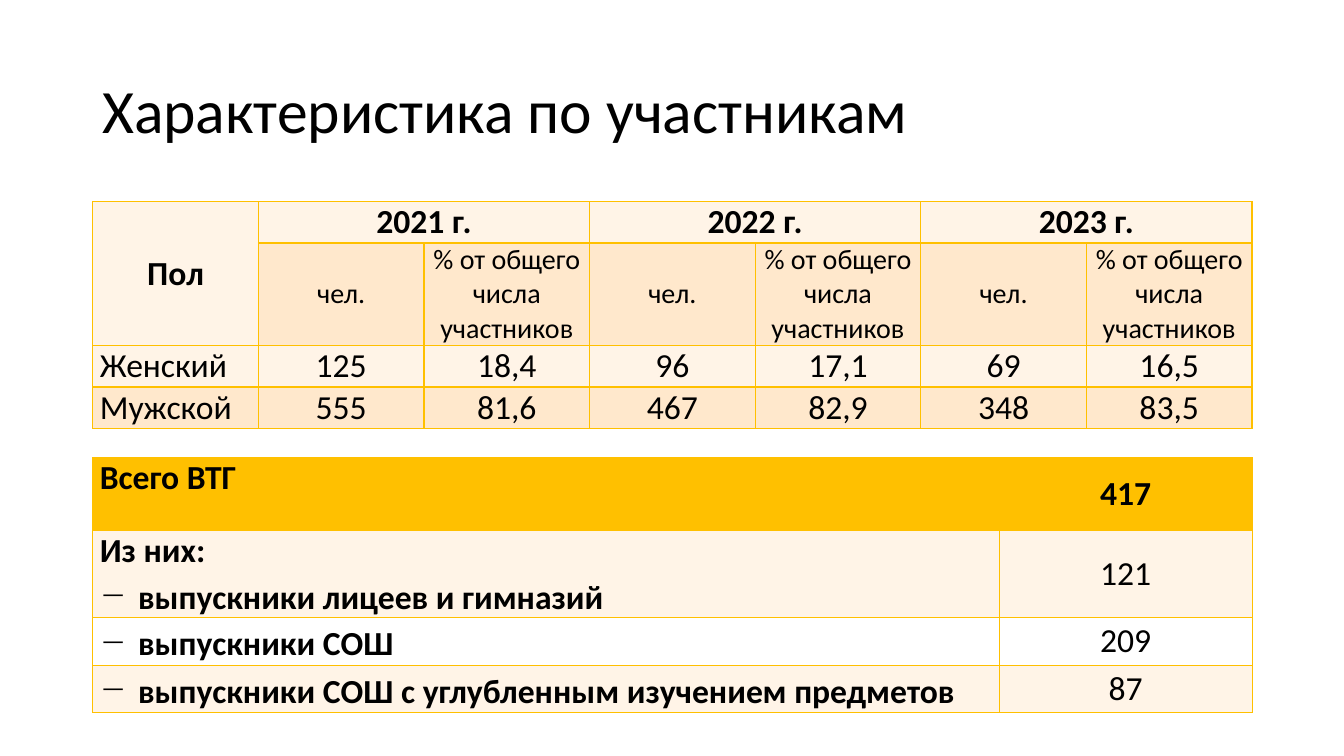
from dataclasses import dataclass

from lxml.etree import SubElement
from pptx import Presentation
from pptx.dml.color import RGBColor
from pptx.enum.text import MSO_ANCHOR as Anchor, PP_ALIGN as Align
from pptx.oxml.ns import qn
from pptx.slide import Slide
from pptx.table import Table, _Cell as Cell
from pptx.text.text import _Paragraph as Paragraph
from pptx.util import Inches, Pt

FONT = "Calibri"
BLACK, WHITE, GOLD, CREAM, PEACH = "000000", "FFFFFF", "FFC000", "FFF4E7", "FFE8CC"
LEFT, WIDTH = 0.92, 11.5
BULLET_INDENT = 0.38


@dataclass
class Line:
    text: str
    size: int = 24
    bold: bool = False
    align: Align = Align.CENTER
    bullet: bool = False


@dataclass
class CellSpec:
    lines: list[Line]
    fill: str
    anchor: Anchor = Anchor.MIDDLE


def color(value: str) -> RGBColor:
    return RGBColor.from_string(value)


def write_line(paragraph: Paragraph, line: Line) -> None:
    paragraph.text = line.text
    paragraph.alignment = line.align
    font = paragraph.font
    font.name, font.size, font.bold = FONT, Pt(line.size), line.bold
    font.color.rgb = color(BLACK)
    if line.bullet:
        paragraph.line_spacing = 1.15
        properties = paragraph._p.get_or_add_pPr()
        properties.set("marL", str(Inches(BULLET_INDENT)))
        properties.set("indent", str(-Inches(BULLET_INDENT)))
        bullet = properties.makeelement(qn("a:buChar"), {"char": "−"})
        properties.find(qn("a:lnSpc")).addnext(bullet)


def add_borders(cell: Cell) -> None:
    properties = cell._tc.get_or_add_tcPr()
    for side in ("lnL", "lnR", "lnT", "lnB"):
        border = SubElement(properties, qn(f"a:{side}"), w=str(Pt(1)))
        fill = SubElement(border, qn("a:solidFill"))
        SubElement(fill, qn("a:srgbClr"), val=GOLD)


def fill_cell(cell: Cell, spec: CellSpec) -> None:
    add_borders(cell)
    cell.fill.solid()
    cell.fill.fore_color.rgb = color(spec.fill)
    cell.vertical_anchor = spec.anchor
    cell.margin_left = cell.margin_right = Inches(0.07)
    cell.margin_top = cell.margin_bottom = 0
    frame = cell.text_frame
    for index, line in enumerate(spec.lines):
        paragraph = frame.add_paragraph() if index else frame.paragraphs[0]
        write_line(paragraph, line)


def add_table(slide: Slide, top: float, widths: list[float], heights: list[float],
              rows: list[list[CellSpec]]) -> Table:
    frame = slide.shapes.add_table(len(heights), len(widths), Inches(LEFT), Inches(top),
                                   Inches(sum(widths)), Inches(sum(heights)))
    table = frame.table
    table.first_row = table.horz_banding = False
    for column, width in zip(table.columns, widths):
        column.width = Inches(width)
    for row, height in zip(table.rows, heights):
        row.height = Inches(height)
    for row, specs in zip(table.rows, rows):
        for cell, spec in zip(row.cells, specs):
            fill_cell(cell, spec)
    return table


def add_title(slide: Slide) -> None:
    box = slide.shapes.add_textbox(Inches(LEFT), Inches(0.4), Inches(WIDTH), Inches(1.45))
    frame = box.text_frame
    frame.word_wrap = True
    frame.vertical_anchor = Anchor.MIDDLE
    write_line(frame.paragraphs[0],
               Line("Характеристика по участникам", 44, align=Align.LEFT))
    frame.paragraphs[0].line_spacing = 0.9


def add_gender_table(slide: Slide) -> None:
    years = ["2021 г.", "2022 г.", "2023 г."]
    genders = [
        ("Женский", CREAM, ["125", "18,4", "96", "17,1", "69", "16,5"]),
        ("Мужской", PEACH, ["555", "81,6", "467", "82,9", "348", "83,5"]),
    ]
    # Two header rows; cells hidden by a merge stay empty
    year_row = [CellSpec([Line("Пол", bold=True)], CREAM)]
    unit_row = [CellSpec([], CREAM)]
    for year in years:
        year_row += [CellSpec([Line(year, bold=True)], CREAM, Anchor.TOP), CellSpec([], CREAM)]
        unit_row += [CellSpec([Line(unit, 20)], PEACH)
                     for unit in ("чел.", "% от общего числа участников")]
    rows = [year_row, unit_row]
    for gender, fill, values in genders:
        lines = [Line(gender, align=Align.LEFT)] + [Line(value) for value in values]
        rows.append([CellSpec([line], fill) for line in lines])

    column_count = 1 + 2 * len(years)
    table = add_table(slide, 2, [WIDTH / column_count] * column_count,
                      [0.41, 1.02, 0.41, 0.41], rows)
    table.cell(0, 0).merge(table.cell(1, 0))
    for column in range(1, column_count, 2):
        table.cell(0, column).merge(table.cell(0, column + 1))


def add_graduates_table(slide: Slide) -> None:
    def label(text: str, bullet: bool = True) -> Line:
        return Line(text, bold=True, align=Align.JUSTIFY, bullet=bullet)

    groups = [
        ([label("Всего ВТГ", False)], Line("417", bold=True), GOLD),
        ([label("Из них:", False), label("выпускники лицеев и гимназий")], Line("121"), CREAM),
        ([label("выпускники СОШ")], Line("209"), WHITE),
        ([label("выпускники СОШ с углубленным изучением предметов")], Line("87"), CREAM),
    ]
    rows = [[CellSpec(labels, fill, Anchor.TOP), CellSpec([count], fill)]
            for labels, count, fill in groups]
    add_table(slide, 4.54, [8.99, 2.51], [0.72, 0.87, 0.47, 0.47], rows)


def main() -> None:
    presentation = Presentation()
    presentation.slide_width, presentation.slide_height = Inches(13.33), Inches(7.5)
    slide = presentation.slides.add_slide(presentation.slide_layouts[6])
    add_title(slide)
    add_gender_table(slide)
    add_graduates_table(slide)
    presentation.save("out.pptx")


if __name__ == "__main__":
    main()
